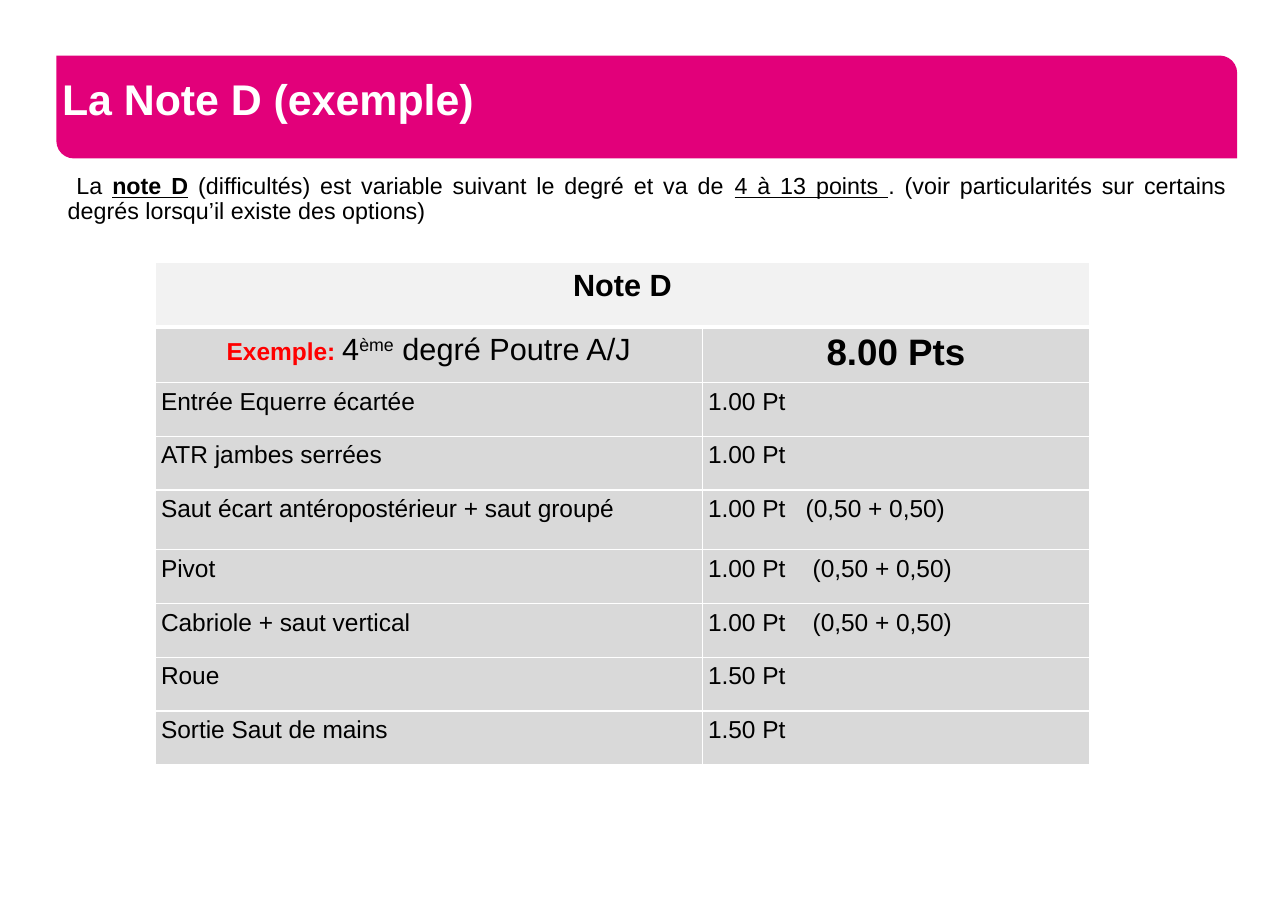
"""Build the slide that explains the D score with a worked beam example."""
from lxml.etree import SubElement
from pptx import Presentation
from pptx.dml.color import RGBColor as Rgb
from pptx.enum.shapes import MSO_SHAPE as Shape
from pptx.enum.text import MSO_ANCHOR as Anchor, PP_ALIGN as Align
from pptx.oxml import parse_xml
from pptx.oxml.ns import nsdecls, qn
from pptx.util import Cm, Pt

COLORS = {"banner": "E2007A", "white": "FFFFFF", "black": "000000",
          "red": "FF0000", "header": "F2F2F2", "body": "D9D9D9"}
INSET = Cm(0.13)


class SlideBuilder:
    def __init__(self, slide, font_name):
        self.slide = slide
        self.font_name = font_name

    def color(self, name):
        return Rgb.from_string(COLORS[name])

    def set_insets(self, target):
        target.margin_left = target.margin_right = INSET
        target.margin_top = target.margin_bottom = INSET

    def fill_paragraph(self, para, spans, size, color="black", bold=False,
                       align=Align.LEFT):
        para.alignment = align
        font = para.font
        font.name, font.size, font.bold = self.font_name, Pt(size), bold
        font.color.rgb = self.color(color)
        for text, style in spans:
            span = para.add_run()
            span.text = text
            if "bold" in style:
                span.font.bold = style["bold"]
            if "underline" in style:
                span.font.underline = style["underline"]
            if "size" in style:
                span.font.size = Pt(style["size"])
            if "color" in style:
                span.font.color.rgb = self.color(style["color"])
            if "baseline" in style:
                span.font._element.set("baseline", str(style["baseline"]))

    def banner(self, left, top, width, height):
        shape = self.slide.shapes.add_shape(
            Shape.ROUND_2_DIAG_RECTANGLE, Cm(left), Cm(top), Cm(width), Cm(height))
        shape.adjustments[0], shape.adjustments[1] = 0, 0.17
        shape.shadow.inherit = False
        shape.fill.solid()
        shape.fill.fore_color.rgb = self.color("banner")
        shape.line.fill.background()

    def text(self, left, top, width, height, spans, size, spacing,
             anchor=Anchor.TOP, indent=0, **style):
        box = self.slide.shapes.add_textbox(Cm(left), Cm(top), Cm(width), Cm(height))
        frame = box.text_frame
        frame.word_wrap = True
        frame.vertical_anchor = anchor
        self.set_insets(frame)
        para = frame.paragraphs[0]
        para.line_spacing = spacing
        para._p.get_or_add_pPr().set("indent", str(Cm(indent)))
        self.fill_paragraph(para, spans, size, **style)

    def table(self, left, top, widths, heights):
        table = self.slide.shapes.add_table(
            len(heights), len(widths), Cm(left), Cm(top),
            Cm(sum(widths)), Cm(sum(heights))).table
        table.first_row = table.horz_banding = False
        for column, width in zip(table.columns, widths):
            column.width = Cm(width)
        for row, height in zip(table.rows, heights):
            row.height = Cm(height)
        for index, row in enumerate(table.rows):
            for cell in row.cells:
                self.set_insets(cell)
                cell.fill.solid()
                cell.fill.fore_color.rgb = self.color("body" if index else "header")
                self.borders(cell, top=3 if index == 1 else 1,
                             bottom=1 if index else 3)
        return table

    def borders(self, cell, top, bottom):
        sides = (("lnL", 1), ("lnR", 1), ("lnT", top), ("lnB", bottom))
        for position, (tag, width) in enumerate(sides):
            cell._tc.get_or_add_tcPr().insert(position, parse_xml(
                f'<a:{tag} {nsdecls("a")} w="{Pt(width)}"><a:solidFill>'
                f'<a:srgbClr val="{COLORS["white"]}"/></a:solidFill></a:{tag}>'))

    def cell_text(self, cell, spans, size=16, tab=None, **style):
        para = cell.text_frame.paragraphs[0]
        if tab:
            stops = SubElement(para._p.get_or_add_pPr(), qn("a:tabLst"))
            SubElement(stops, qn("a:tab"), pos=str(Cm(tab)), algn="l")
        self.fill_paragraph(para, spans, size, **style)


def main():
    deck = Presentation()
    deck.slide_width, deck.slide_height = Cm(29.67), Cm(20.98)
    page = SlideBuilder(deck.slides.add_slide(deck.slide_layouts[6]), "Arial")

    banner_area = (1.3, 1.28, 27.2, 2.37)
    page.banner(*banner_area)
    page.text(*banner_area, [("La Note D (exemple)", {})], 28, Pt(22),
              anchor=Anchor.MIDDLE, color="white", bold=True)
    page.text(1.43, 3.89, 26.95, 1.8, [
        ("La ", {}),
        ("note D", {"bold": True, "underline": True}),
        (" (difficultés) est variable suivant le degré et va de ", {}),
        ("4 à 13 points ", {"underline": True}),
        (". (voir particularités sur certains degrés lorsqu’il existe des options)", {}),
    ], 15.2, 0.9, indent=0.2, align=Align.JUSTIFY)

    elements = [
        ("Entrée Equerre écartée", "1.00 Pt", None),
        ("ATR jambes serrées", "1.00 Pt", None),
        ("Saut écart antéropostérieur + saut groupé", "1.00 Pt\t(0,50 + 0,50)", 2.25),
        ("Pivot", "1.00 Pt\t(0,50 + 0,50)", 2.41),
        ("Cabriole + saut vertical", "1.00 Pt\t(0,50 + 0,50)", 2.41),
        ("Roue", "1.50 Pt", None),
        ("Sortie Saut de mains", "1.50 Pt", None),
    ]
    heights = [1.48] + [1.24] * 3 + [1.37] + [1.24] * 4
    table = page.table(3.58, 6.05, [12.6, 8.92], heights)
    table.cell(0, 0).merge(table.cell(0, 1))
    page.cell_text(table.cell(0, 0), [("Note D", {})], 20, bold=True, align=Align.CENTER)
    page.cell_text(table.cell(1, 0), [
        ("Exemple: ", {"size": 16, "color": "red", "bold": True}),
        ("4", {}),
        ("ème", {"baseline": 30000}),
        (" degré Poutre A/J", {}),
    ], 20, align=Align.CENTER)
    page.cell_text(table.cell(1, 1), [("8.00 Pts", {})], 24, bold=True, align=Align.CENTER)
    for row, (name, points, tab) in enumerate(elements, start=2):
        page.cell_text(table.cell(row, 0), [(name, {})])
        page.cell_text(table.cell(row, 1), [(points, {})], tab=tab)

    deck.save("out.pptx")


if __name__ == "__main__":
    main()
